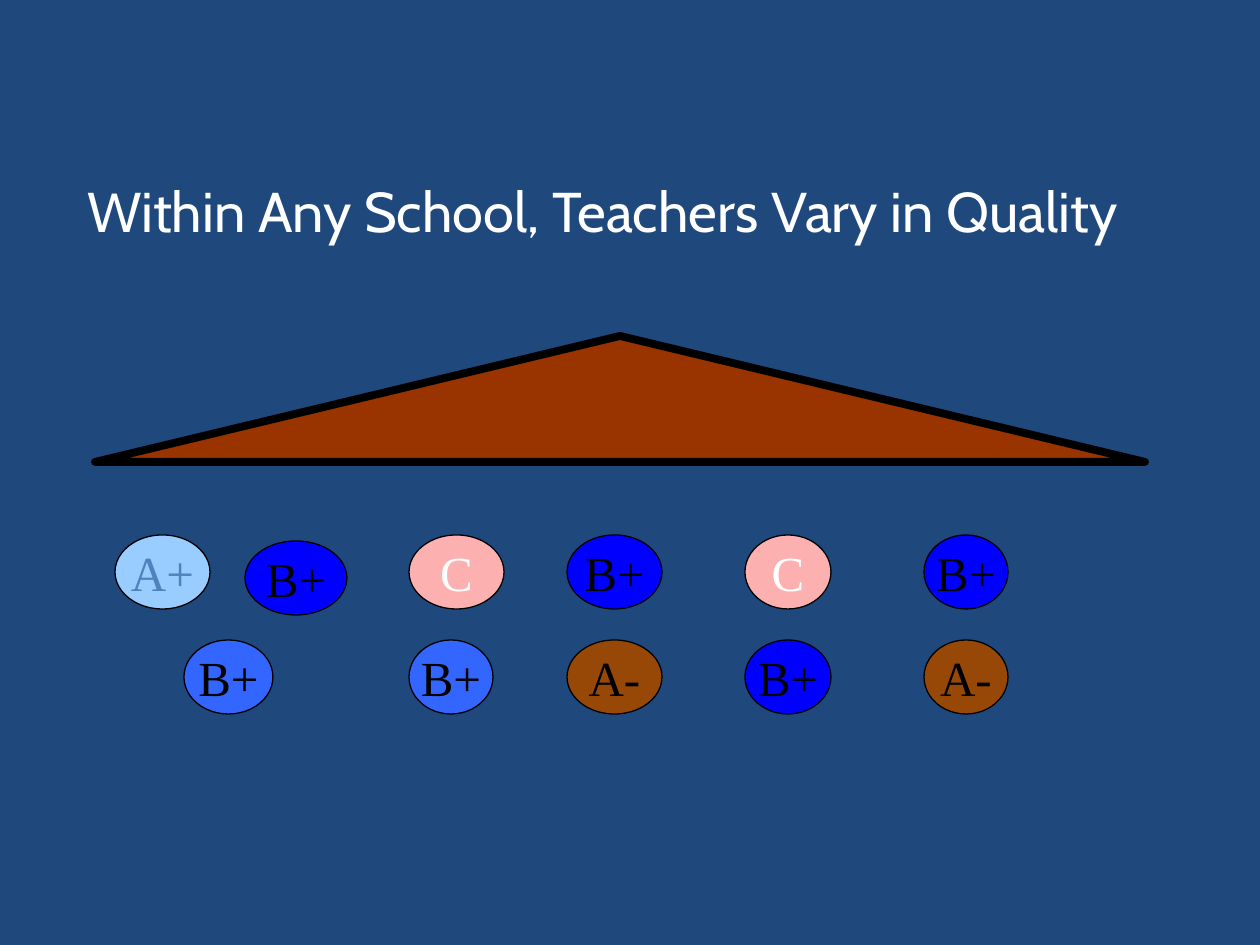
"""Build a slide of graded teachers under one school roof."""
from pptx import Presentation
from pptx import util as u
from pptx.dml.color import RGBColor
from pptx.enum import shapes, text

PX = u.Inches(1) / 126
COLORS = {
    "background": "1F497D", "white": "FFFFFF", "black": "000000",
    "roof": "993300", "sky": "99CCFF", "azure": "3366FF",
    "blue": "0000FF", "pink": "FDB0B0", "brown": "974806", "steel": "4F81BD",
}


def color(name):
    return RGBColor.from_string(COLORS[name])


def add_outlined(kind, box, fill, line_width):
    shape = slide.shapes.add_shape(kind, *(round(length * PX) for length in box))
    shape.shadow.inherit = False
    shape.fill.solid()
    shape.fill.fore_color.rgb = color(fill)
    shape.line.color.rgb = color("black")
    shape.line.width = u.Pt(line_width)
    return shape


presentation = Presentation()
presentation.slide_width = round(1260 * PX)
presentation.slide_height = round(945 * PX)
slide = presentation.slides.add_slide(presentation.slide_layouts[0])
slide.background.fill.solid()
slide.background.fill.fore_color.rgb = color("background")

subtitle = slide.placeholders[1].element
subtitle.getparent().remove(subtitle)

title = slide.shapes.title
title.left, title.top, title.width, title.height = (
    round(length * PX) for length in (31, 53, 1144, 203))
frame = title.text_frame
frame.text = "Within Any School, Teachers Vary in Quality"
frame.word_wrap = True
frame.auto_size = text.MSO_AUTO_SIZE.NONE
frame.vertical_anchor = text.MSO_ANCHOR.BOTTOM
frame.margin_left = frame.margin_right = u.Inches(0.1)
frame.margin_top = frame.margin_bottom = u.Inches(0.1)
paragraph = frame.paragraphs[0]
paragraph.alignment = text.PP_ALIGN.CENTER
paragraph.font.size = u.Pt(32)
paragraph.font.name = "Cabin"
paragraph.font.color.rgb = color("white")

UPPER, LOWER = 535, 640
teachers = [
    ("A+", 115, UPPER, 95, "sky", "steel"),
    ("B+", 184, LOWER, 89, "azure", "black"),
    ("B+", 409, LOWER, 84, "azure", "black"),
    ("B+", 245, UPPER + 6, 102, "blue", "black"),
    ("C", 409, UPPER, 95, "pink", "white"),
    ("B+", 567, UPPER, 95, "blue", "black"),
    ("A-", 567, LOWER, 95, "brown", "black"),
    ("C", 745, UPPER, 86, "pink", "white"),
    ("B+", 924, UPPER, 84, "blue", "black"),
    ("B+", 745, LOWER, 86, "blue", "black"),
    ("A-", 924, LOWER, 84, "brown", "black"),
]
for grade, left, top, width, fill, ink in teachers:
    teacher = add_outlined(shapes.MSO_SHAPE.OVAL, (left, top, width, 74), fill, 0.75)
    frame = teacher.text_frame
    frame.text = grade
    frame.word_wrap = False
    frame.vertical_anchor = text.MSO_ANCHOR.MIDDLE
    paragraph = frame.paragraphs[0]
    paragraph.alignment = text.PP_ALIGN.CENTER
    paragraph.font.size = u.Pt(28)
    paragraph.font.name = "Times New Roman"
    paragraph.font.color.rgb = color(ink)

add_outlined(shapes.MSO_SHAPE.ISOSCELES_TRIANGLE, (95, 336, 1050, 126), "roof", 4.5)

presentation.save("out.pptx")
